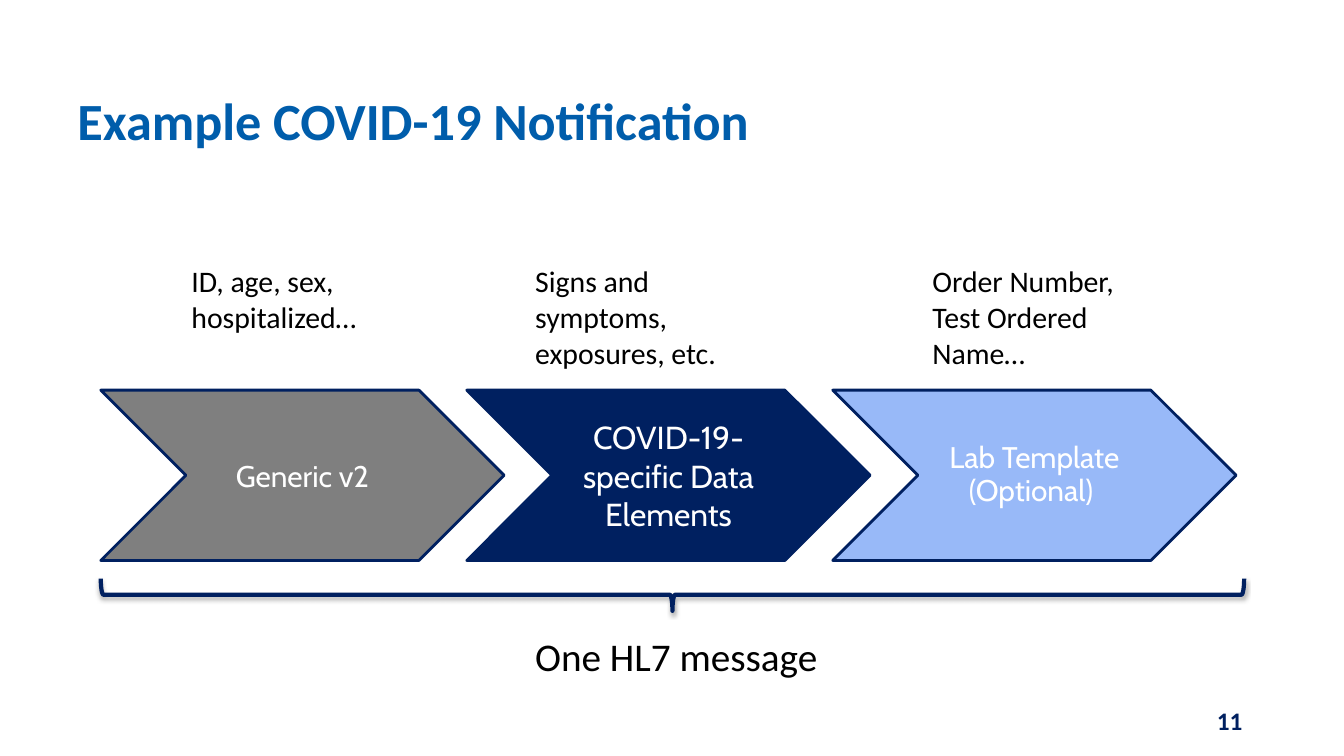
from lxml import etree
from pptx import Presentation
from pptx.dml.color import RGBColor
from pptx.enum.shapes import MSO_SHAPE
from pptx.enum.text import MSO_ANCHOR as Anchor, PP_ALIGN as Align
from pptx.oxml import parse_xml
from pptx.oxml.ns import nsdecls
from pptx.util import Inches, Pt

WIDTH, HEIGHT = 13.33, 7.5
NAVY, BLUE, GRAY, SKY = "002060", "005DAB", "7F7F7F", "98B9F8"
BLACK, WHITE = "000000", "FFFFFF"

# The chevrons sit on a row of equal columns.
ROW_LEFT, ROW_TOP, COLUMN_STEP = 1, 3.87, 3.63
CHEVRON_WIDTH, CHEVRON_HEIGHT = 4, 1.69
CAPTION_TOP = 2.56
BRACE_TOP, BRACE_LENGTH, BRACE_DEPTH = 5.74, 11.34, 0.32

# Chevron label, size, line spacing, fill; caption, its left, width, height
SECTIONS = [
    ("Generic v2", 21.3, None, GRAY,
     "ID, age, sex, hospitalized…", 1.8, 2.02, 0.82),
    ("COVID-19-specific Data Elements", 22.7, None, NAVY,
     "Signs and symptoms, exposures, etc.", 5.21, 2.55, 1.18),
    ("Lab Template\n(Optional) ", 21.3, 0.9, SKY,
     "Order Number, Test Ordered Name…", 9.15, 2.02, 1.18),
]


def color(value):
    return RGBColor.from_string(value)


def write(shape, text, size=21.3, font="Calibri", fill=BLACK, bold=False,
          align=Align.LEFT, anchor=Anchor.TOP, spacing=None, wrap=True):
    """Fill the shape with text, one paragraph for each line."""
    frame = shape.text_frame
    frame.word_wrap = wrap
    frame.vertical_anchor = anchor
    frame.text = text
    for paragraph in frame.paragraphs:
        paragraph.alignment = align
        paragraph.line_spacing = spacing
        paragraph.font.size = Pt(size)
        paragraph.font.name = font
        paragraph.font.bold = bold
        paragraph.font.color.rgb = color(fill)


def add_text(slide, text, left, top, width, height, **text_format):
    box = slide.shapes.add_textbox(*map(Inches, (left, top, width, height)))
    write(box, text, **text_format)


def add_outlined(slide, kind, left, top, width, height, line_width):
    shape = slide.shapes.add_shape(kind, *map(Inches, (left, top, width, height)))
    shape.shadow.inherit = False
    shape.line.color.rgb = color(NAVY)
    shape.line.width = Pt(line_width)
    return shape


def add_chevron(slide, column, label, size, spacing, fill):
    chevron = add_outlined(slide, MSO_SHAPE.CHEVRON, ROW_LEFT + column * COLUMN_STEP,
                           ROW_TOP, CHEVRON_WIDTH, CHEVRON_HEIGHT, 2)
    chevron.fill.solid()
    chevron.fill.fore_color.rgb = color(fill)
    write(chevron, label, size=size, font="Cabin", fill=WHITE, spacing=spacing,
          align=Align.CENTER, anchor=Anchor.MIDDLE)


def add_soft_shadow(shape, blur, distance, opacity):
    effects = shape.element.spPr.find("{*}effectLst")
    shadow = parse_xml(
        f'<a:outerShdw {nsdecls("a")} blurRad="{Pt(blur)}" dist="{Pt(distance)}" '
        f'dir="5400000" rotWithShape="0"><a:srgbClr val="{BLACK}">'
        f'<a:alpha val="{opacity * 1000}"/></a:srgbClr></a:outerShdw>')
    effects.append(shadow)


def add_brace_below(slide):
    """Lay a left brace on its side, turned about its own centre."""
    left = ROW_LEFT + (BRACE_LENGTH - BRACE_DEPTH) / 2
    top = BRACE_TOP - (BRACE_LENGTH - BRACE_DEPTH) / 2
    brace = add_outlined(slide, MSO_SHAPE.LEFT_BRACE, left, top,
                         BRACE_DEPTH, BRACE_LENGTH, 3)
    brace.rotation = 270
    brace.fill.background()
    add_soft_shadow(brace, blur=3.1, distance=1.8, opacity=35)


def main():
    presentation = Presentation()
    presentation.slide_width = Inches(WIDTH)
    presentation.slide_height = Inches(HEIGHT)
    slide = presentation.slides.add_slide(presentation.slide_layouts[6])

    add_text(slide, "Example COVID-19 Notification", 0.67, 0.3, 12, 1.25,
             size=37.3, fill=BLUE, bold=True, anchor=Anchor.BOTTOM, spacing=Pt(40))
    for column, section in enumerate(SECTIONS):
        label, size, spacing, fill, caption, left, width, height = section
        add_text(slide, caption, left, CAPTION_TOP, width, height)
        add_chevron(slide, column, label, size, spacing, fill)
    add_brace_below(slide)
    add_text(slide, "One HL7 message", 5.21, 6.22, 3.03, 0.57, size=28, wrap=False)
    add_text(slide, "11", 9.42, 6.95, 3, 0.4, size=18, fill=NAVY, bold=True,
             align=Align.RIGHT)
    presentation.save("out.pptx")


if __name__ == "__main__":
    main()
